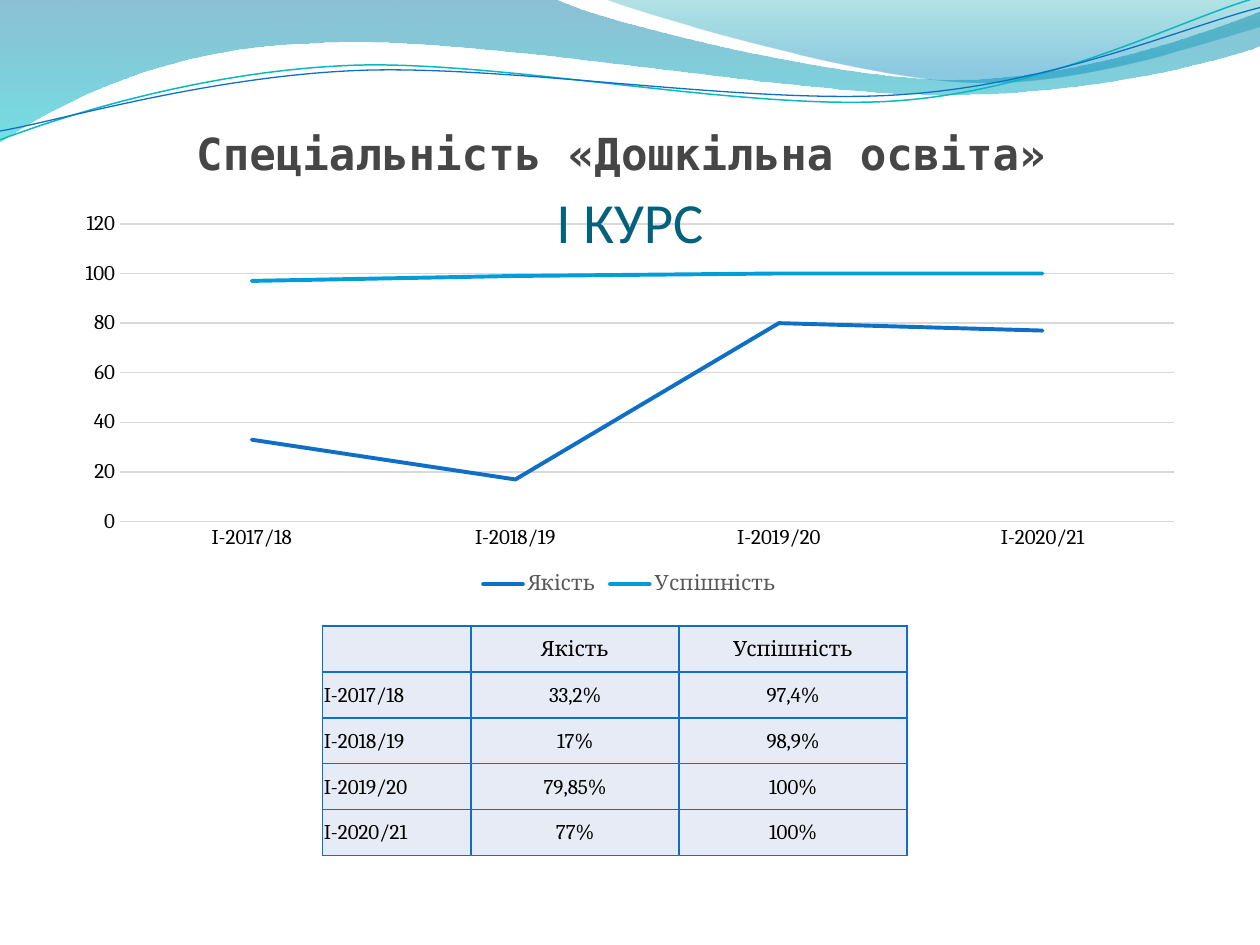
from pptx import Presentation
from pptx.chart.data import CategoryChartData
from pptx.dml.color import RGBColor
from pptx.enum.chart import XL_CHART_TYPE as ChartType, XL_LEGEND_POSITION as LegendPosition, XL_TICK_MARK as TickMark
from pptx.enum.text import MSO_ANCHOR as Anchor, PP_ALIGN as Align
from pptx.oxml import parse_xml
from pptx.oxml.ns import nsdecls, qn
from pptx.util import Inches, Pt

YEARS = ["I-2017/18", "I-2018/19", "I-2019/20", "I-2020/21"]
MEASURES = {"Якість": [33.2, 17, 79.85, 77], "Успішність": [97.4, 98.9, 100, 100]}

BROAD_WAVE = [
    (0, 0), (4.4, -0.01), (4.76, 0.17, 6.64, 0.63, 7.58, 0.63),
    (8.53, 0.63, 9.58, 0.26, 10, 0.09), (10.01, 0.36),
    (9.83, 0.44, 8.7, 0.76, 7.46, 0.75), (6.22, 0.75, 3.82, 0.28, 2.57, 0.34),
    (1.29, 0.36, 0.46, 0.83, -0.01, 1.13), (0, 0),
]
RIGHT_WAVE = [
    (4.79, -0.01), (5.09, 0.11, 6.82, 0.62, 7.69, 0.65),
    (8.56, 0.69, 9.61, 0.32, 10, 0.21), (10, 0), (4.79, -0.01),
]
TEAL_LINE = [
    (0, 1.11), (0.48, 0.93, 1.58, 0.57, 2.77, 0.52),
    (3.95, 0.47, 5.93, 0.89, 7.13, 0.8), (8.33, 0.71, 9.38, 0.15, 9.98, -0.02),
]
BLUE_LINE = [
    (0, 1.04), (0.47, 0.96, 1.64, 0.61, 2.83, 0.56),
    (4.03, 0.51, 5.97, 0.84, 7.17, 0.75), (8.36, 0.67, 9.41, 0.21, 10, 0.06),
]


def color(value):
    return RGBColor.from_string(value)


def bend_segments(shape, steps):
    segments = iter(list(shape.element.spPr.iter(qn("a:lnTo"))))
    for step in steps[1:]:
        first = next(segments)
        if len(step) == 6:
            bend = parse_xml(f'<a:cubicBezTo {nsdecls("a")}/>')
            first.addprevious(bend)
            for segment in (first, next(segments), next(segments)):
                bend.append(segment[0])
                segment.getparent().remove(segment)


class SlideBuilder:
    """Holds the shared style and the current slide, and adds elements to it."""

    font_name = "Cambria"
    blue, sky, black, gray, grid = "0F6FC6", "009DD9", "000000", "595959", "D9D9D9"
    cell_fill = "E7EBF5"

    def __init__(self, page):
        self.page = page

    def style_font(self, font, size, ink, name=None, bold=False):
        font.name = name or self.font_name
        font.size = Pt(size)
        font.bold = bold
        font.color.rgb = color(ink)

    def outline(self, steps, close):
        points = [(Inches(x), Inches(y)) for step in steps for x, y in zip(step[::2], step[1::2])]
        builder = self.page.shapes.build_freeform(*points[0])
        builder.add_line_segments(points[1:], close=close)
        shape = builder.convert_to_shape()
        bend_segments(shape, steps)
        shape.shadow.inherit = False
        return shape

    def wave(self, steps, stops):
        shape = self.outline(steps, True)
        shape.line.fill.background()
        shape.fill.gradient()
        shape.fill.gradient_angle = 270
        for stop, (position, ink, _) in zip(shape.fill.gradient_stops, stops):
            stop.position = position
            stop.color.rgb = color(ink)
        inks = shape.element.spPr.iter(qn("a:srgbClr"))
        for node, (_, _, opacity) in zip(inks, stops):
            node.append(parse_xml(f'<a:alpha {nsdecls("a")} val="{opacity * 1000}"/>'))

    def curve(self, steps, ink, width):
        shape = self.outline(steps, False)
        shape.fill.background()
        shape.line.color.rgb = color(ink)
        shape.line.width = Pt(width)

    def title(self, left, top, width, height):
        box = self.page.shapes.add_textbox(Inches(left), Inches(top), Inches(width), Inches(height))
        frame = box.text_frame
        frame.word_wrap = True
        frame.vertical_anchor = Anchor.BOTTOM
        frame.margin_left = frame.margin_right = frame.margin_bottom = 0
        frame.margin_top = Inches(0.05)
        para = frame.paragraphs[0]
        para.alignment = Align.CENTER
        self.span(para, "Спеціальність «Дошкільна освіта»", 25.2, "464646", "DejaVu Sans Mono", True)
        self.span(para, " ", 45, "04617B", "Calibri")
        para.add_line_break()
        self.span(para, "І КУРС", 32.4, "04617B", "Calibri")

    def span(self, para, text, size, ink, name=None, bold=False):
        span = para.add_run()
        span.text = text
        self.style_font(span.font, size, ink, name, bold)

    def line_chart(self, left, top, width, height):
        data = CategoryChartData()
        data.categories = YEARS
        for name, values in MEASURES.items():
            data.add_series(name, [round(value) for value in values])
        chart = self.page.shapes.add_chart(
            ChartType.LINE, Inches(left), Inches(top), Inches(width), Inches(height), data).chart
        self.style_font(chart.font, 10, self.black)
        chart.has_title = False
        chart.has_legend = True
        chart.legend.position = LegendPosition.BOTTOM
        chart.legend.include_in_layout = False
        self.style_font(chart.legend.font, 12, self.gray)
        chart.plots[0].vary_by_categories = False
        for series, ink in zip(chart.plots[0].series, (self.blue, self.sky)):
            series.smooth = False
            series.format.line.color.rgb = color(ink)
            series.format.line.width = Pt(2.25)
            for line in series.format.element.iter(qn("a:ln")) if hasattr(series.format, "element") else ():
                line.set("cap", "rnd")
        for axis in (chart.category_axis, chart.value_axis):
            axis.major_tick_mark = axis.minor_tick_mark = TickMark.NONE
            self.style_font(axis.tick_labels.font, 12, self.black)
        scale = chart.value_axis
        scale.minimum_scale, scale.maximum_scale, scale.major_unit = 0, 120, 20
        scale.format.line.fill.background()
        scale.has_major_gridlines = True
        for line in (chart.category_axis.format.line, scale.major_gridlines.format.line):
            line.color.rgb = color(self.grid)
            line.width = Pt(0.75)

    def table(self, left, top, widths, height):
        rows = [["", *MEASURES]]
        for year, *values in zip(YEARS, *MEASURES.values()):
            rows.append([year] + [f"{value}%".replace(".", ",") for value in values])
        table = self.page.shapes.add_table(
            len(rows), len(widths), Inches(left), Inches(top), Inches(sum(widths)), Inches(height)).table
        for column, width in zip(table.columns, widths):
            column.width = Inches(width)
        for row, texts in zip(table.rows, rows):
            for index, (cell, text) in enumerate(zip(row.cells, texts)):
                self.fill_cell(cell, text, Align.CENTER if index else Align.LEFT)

    def fill_cell(self, cell, text, alignment):
        cell.vertical_anchor = Anchor.MIDDLE
        cell.margin_left = cell.margin_right = cell.margin_top = Inches(0.01)
        cell.margin_bottom = 0
        properties = cell._tc.get_or_add_tcPr()
        for side in ("lnL", "lnR", "lnT", "lnB"):
            properties.append(parse_xml(
                f'<a:{side} {nsdecls("a")} w="{Pt(1)}"><a:solidFill>'
                f'<a:srgbClr val="{self.blue}"/></a:solidFill></a:{side}>'))
        cell.fill.solid()
        cell.fill.fore_color.rgb = color(self.cell_fill)
        if text:
            para = cell.text_frame.paragraphs[0]
            para.alignment = alignment
            self.span(para, text, 12, self.black)


def main():
    deck = Presentation()
    deck.slide_width, deck.slide_height = Inches(10), Inches(7.5)
    builder = SlideBuilder(deck.slides.add_slide(deck.slide_layouts[6]))
    builder.wave(BROAD_WAVE, [(0, "0074A1", 45), (1, "00C6CF", 55)])
    builder.wave(RIGHT_WAVE, [(0, "00A1A9", 30), (0.8, "008BBF", 45)])
    builder.curve(TEAL_LINE, "0AB8BF", 0.85)
    builder.curve(BLUE_LINE, builder.blue, 0.75)
    builder.line_chart(0.5, 1.62, 9, 3.15)
    builder.title(0.5, 0.92, 9, 1.1)
    builder.table(2.56, 4.97, [1.18, 1.65, 1.81], 1.82)
    deck.save("out.pptx")


if __name__ == "__main__":
    main()
